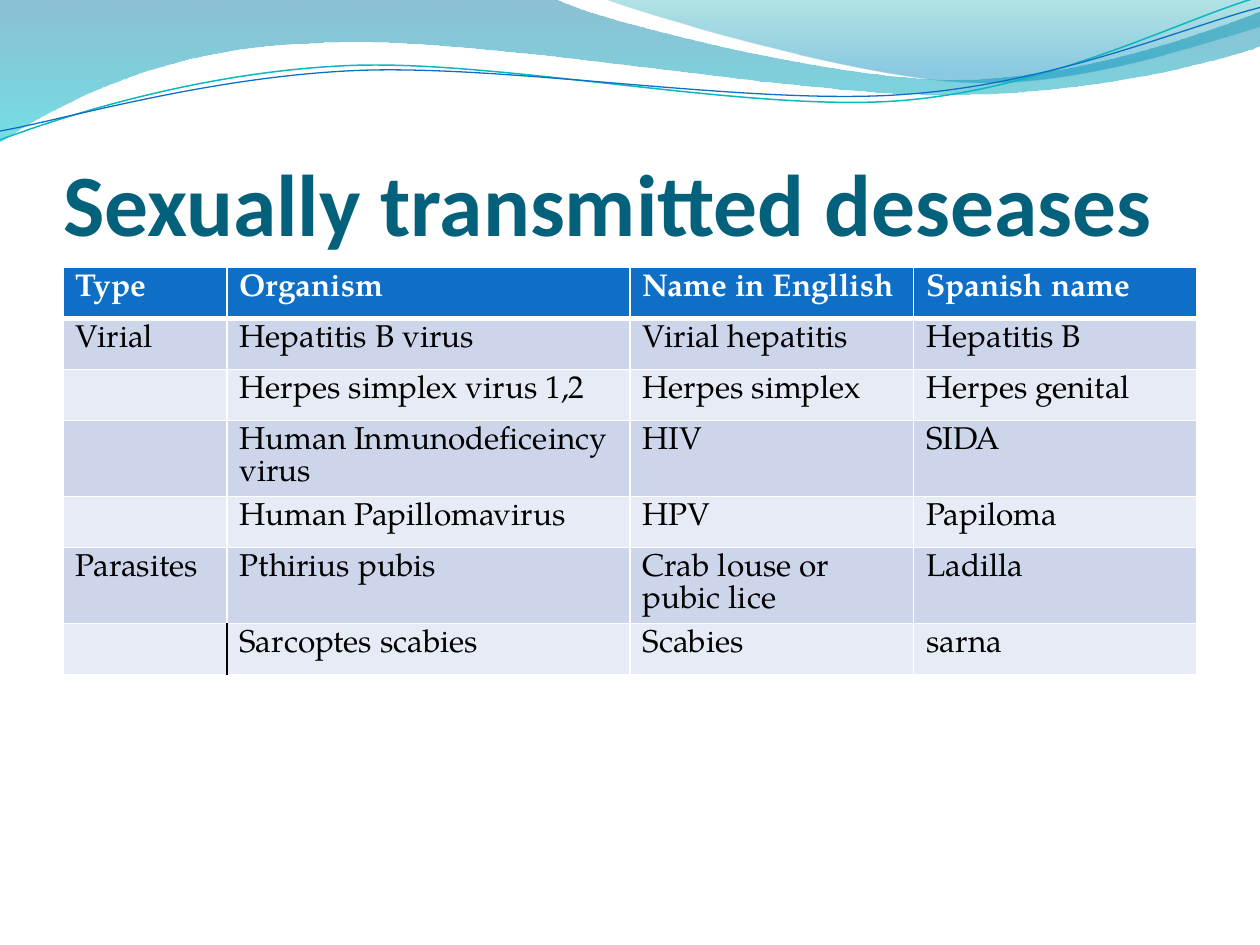
from dataclasses import dataclass
from math import cos, radians, sin
from lxml.etree import SubElement as Sub
from pptx import Presentation
from pptx.dml.color import RGBColor as RGB
from pptx.enum.text import MSO_ANCHOR as Anchor, MSO_AUTO_SIZE as Auto, PP_ALIGN as Align
from pptx.oxml.ns import qn
from pptx.util import Inches, Pt


@dataclass
class Theme:
    head: str = "Calibri"
    body: str = "TeX Gyre Pagella"
    big: int = 50
    text: int = 18
    title: str = "04617B"
    blue: str = "0F6FC6"
    teal: str = "0AB8BF"
    dark: str = "CCD5EA"
    pale: str = "E7EBF5"
    white: str = "FFFFFF"
    black: str = "000000"


theme = Theme()
deck = Presentation()
deck.slide_width, deck.slide_height = Inches(10), Inches(7.5)
slide = deck.slides.add_slide(deck.slide_layouts[5])


def draw(start, parts, close, mid=(0, 0), turn=0):
    """Outline through parts: 2 numbers make a line, 6 a Bezier curve.

    The shape is turned about mid, so its points are first turned back.
    """
    flat = list(start) + [n for part in parts for n in part]
    s, c = sin(radians(-turn)), cos(radians(-turn))
    pts = []
    for x, y in zip(flat[::2], flat[1::2]):
        dx, dy = x - mid[0], y - mid[1]
        pts.append((Inches(mid[0] + dx * c - dy * s), Inches(mid[1] + dx * s + dy * c)))
    form = slide.shapes.build_freeform(*pts[0])
    form.add_line_segments(pts[1:], close=close)
    shape = form.convert_to_shape()
    shape.shadow.inherit = False
    shape.rotation = turn
    # Join each three line ends into one curve
    ends = iter(list(shape._element.iter(qn("a:lnTo"))))
    for part in parts:
        first = next(ends)
        if len(part) == 6:
            first.tag = qn("a:cubicBezTo")
            for end in (next(ends), next(ends)):
                first.append(end[0])
                end.getparent().remove(end)
    return shape


def edge(cell, side, color, width):
    """Border on one side of a cell; call in the order L, R, T, B."""
    line = Sub(cell._tc.get_or_add_tcPr(), qn("a:ln" + side), w=str(Pt(width)))
    Sub(Sub(line, qn("a:solidFill")), qn("a:srgbClr"), val=color)


# Filled waves: start, parts, gradient stops (place, colour, opacity)
waves = [
    ((0, 0), [(4.4, -0.01), (4.76, 0.17, 6.64, 0.63, 7.58, 0.63),
              (8.53, 0.63, 9.58, 0.26, 10, 0.09), (10.01, 0.36),
              (9.83, 0.44, 8.7, 0.76, 7.46, 0.75),
              (6.22, 0.75, 3.82, 0.28, 2.57, 0.34),
              (1.29, 0.36, 0.46, 0.83, -0.01, 1.13), (0, 0)],
     [(0, "0074A1", 45), (1, "00C6CF", 55)]),
    ((4.79, -0.01), [(5.09, 0.11, 6.82, 0.62, 7.69, 0.65),
                     (8.56, 0.69, 9.61, 0.32, 10, 0.21), (10, 0), (4.79, -0.01)],
     [(0, "00A1A9", 30), (0.8, "008BBF", 45)]),
]
for start, parts, stops in waves:
    wave = draw(start, parts, True)
    wave.line.fill.background()
    wave.fill.gradient()
    wave.fill.gradient_angle = 270
    for stop, (place, color, alpha) in zip(wave.fill.gradient_stops, stops):
        stop.position = place
        stop.color.rgb = RGB.from_string(color)
        rgb = stop._gs.find(qn("a:srgbClr"))
        Sub(rgb, qn("a:alpha"), val=str(alpha * 1000))

# Thin wave lines: start, parts, centre, colour, width
lines = [
    ((0, 1.11), [(0.48, 0.93, 1.58, 0.57, 2.77, 0.52),
                 (3.95, 0.47, 5.93, 0.89, 7.13, 0.8),
                 (8.33, 0.71, 9.38, 0.15, 9.98, -0.02)], (4.99, 0.58), theme.teal, 0.85),
    ((0, 1.04), [(0.47, 0.96, 1.64, 0.61, 2.83, 0.56),
                 (4.03, 0.51, 5.97, 0.84, 7.17, 0.75),
                 (8.36, 0.67, 9.41, 0.21, 10, 0.06)], (5, 0.59), theme.blue, 0.75),
]
for start, parts, mid, color, width in lines:
    curve = draw(start, parts, False, mid, 357.3)
    curve.fill.background()
    curve.line.color.rgb = RGB.from_string(color)
    curve.line.width = Pt(width)

# Title, in front of the waves
title = slide.shapes.title
slide.shapes._spTree.append(title._element)
title.left, title.top = Inches(0.5), Inches(0.77)
title.width, title.height = Inches(9), Inches(1.25)
frame = title.text_frame
frame.text = "Sexually transmitted deseases"
frame.auto_size = Auto.NONE
frame.vertical_anchor = Anchor.BOTTOM
frame.margin_left = frame.margin_right = frame.margin_bottom = 0
frame.margin_top = Inches(0.05)
para = frame.paragraphs[0]
para.alignment = Align.LEFT
font = para.font
font.name, font.size, font.bold = theme.head, Pt(theme.big), True
font.color.rgb = RGB.from_string(theme.title)

# Table
rows = [
    ("Type", "Organism", "Name in Engllish", "Spanish name"),
    ("Virial", "Hepatitis B virus", "Virial hepatitis", "Hepatitis B"),
    ("", "Herpes simplex virus 1,2", "Herpes simplex", "Herpes genital"),
    ("", "Human Inmunodeficeincy virus", "HIV", "SIDA"),
    ("", "Human Papillomavirus", "HPV", "Papiloma"),
    ("Parasites", "Pthirius pubis", "Crab louse or pubic lice", "Ladilla"),
    ("", "Sarcoptes scabies", "Scabies", "sarna"),
]
widths = [1.3, 3.2, 2.25, 2.25]
tall = 2.84
last = len(rows) - 1
table = slide.shapes.add_table(len(rows), len(widths), Inches(0.5), Inches(2.12),
                               Inches(sum(widths)), Inches(tall)).table
for col, width in zip(table.columns, widths):
    col.width = Inches(width)
for r, row in enumerate(rows):
    table.rows[r].height = Inches(tall / len(rows))
    shade = theme.blue if r == 0 else theme.dark if r % 2 else theme.pale
    for c, text in enumerate(row):
        cell = table.cell(r, c)
        cell.text = text
        # The last row has a black rule after its first cell
        for side in "LRTB":
            rule = r == last and (c, side) in ((0, "R"), (1, "L"))
            thick = (r, side) in ((0, "B"), (1, "T"))
            edge(cell, side, theme.black if rule else theme.white, 3 if thick else 1)
        cell.fill.solid()
        cell.fill.fore_color.rgb = RGB.from_string(shade)
        font = cell.text_frame.paragraphs[0].font
        font.name, font.size, font.bold = theme.body, Pt(theme.text), r == 0
        font.color.rgb = RGB.from_string(theme.black if r else theme.white)

deck.save("out.pptx")
